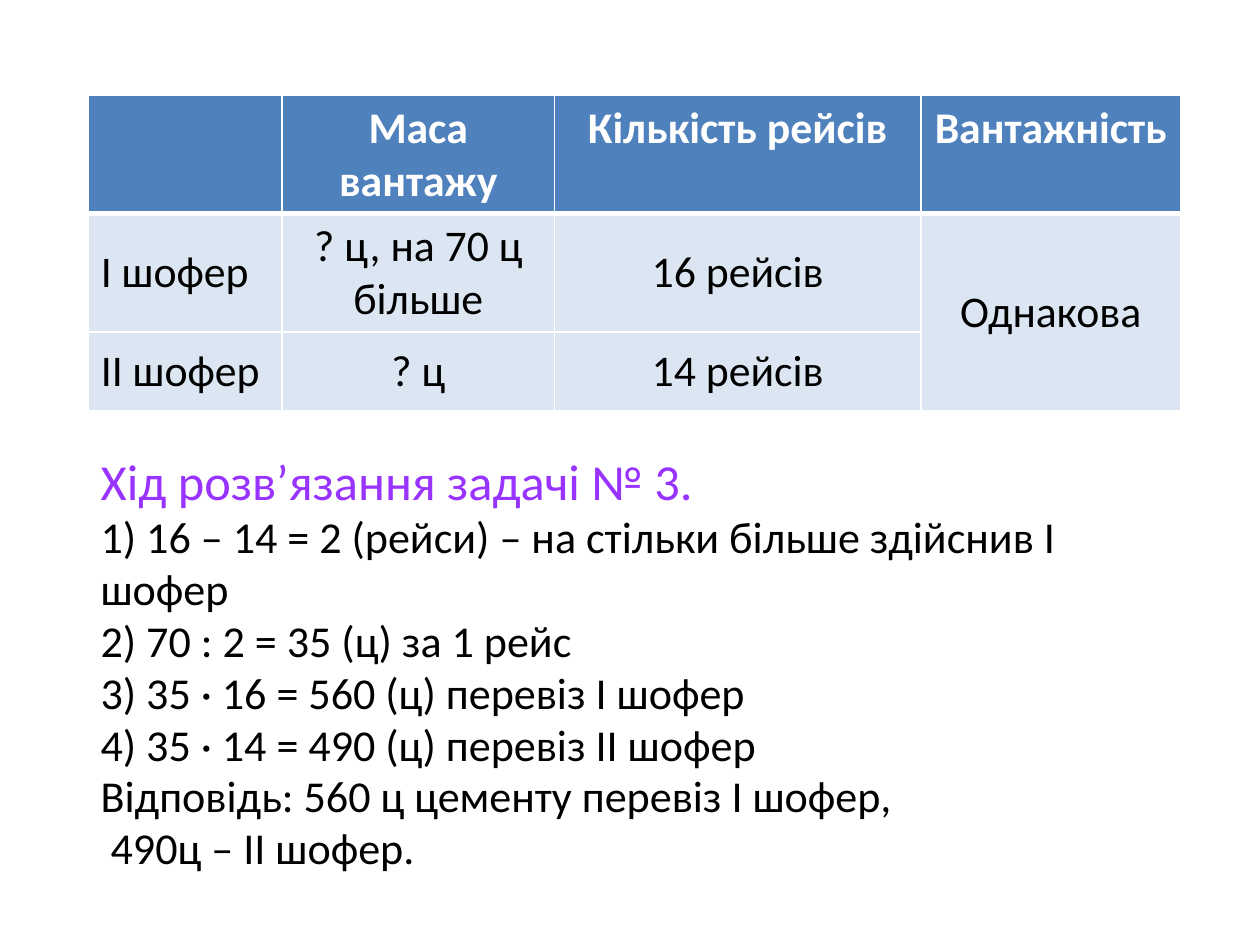
"""Build a slide with a cargo word problem table and its solution steps."""
from dataclasses import dataclass

from lxml import etree
from pptx import Presentation
from pptx.dml.color import RGBColor as Color
from pptx.enum.text import MSO_ANCHOR as Anchor, PP_ALIGN as Align
from pptx.oxml.ns import qn
from pptx.util import Inches, Pt


@dataclass(frozen=True)
class Theme:
    font: str = "Calibri"
    white: Color = Color(0xFF, 0xFF, 0xFF)
    black: Color = Color(0x00, 0x00, 0x00)
    header: Color = Color(0x4F, 0x81, 0xBD)
    body: Color = Color(0xDC, 0xE6, 0xF2)
    accent: Color = Color(0x99, 0x33, 0xFF)
    table_size: float = 25
    heading_size: float = 28.8
    step_size: float = 25.2


theme = Theme()


def add_text(paragraph, text, size, color, bold=False):
    run = paragraph.add_run()
    run.text = text
    run.font.name = theme.font
    run.font.size = Pt(size)
    run.font.bold = bold
    run.font.color.rgb = color


def set_borders(cell, bottom_width):
    properties = cell._tc.get_or_add_tcPr()
    widths = {"a:lnL": 1, "a:lnR": 1, "a:lnT": 1, "a:lnB": bottom_width}
    for position, (tag, width) in enumerate(widths.items()):
        line = etree.Element(qn(tag), w=str(Pt(width)))
        fill = etree.SubElement(line, qn("a:solidFill"))
        etree.SubElement(fill, qn("a:srgbClr"), val=str(theme.white))
        properties.insert(position, line)


presentation = Presentation()
presentation.slide_width = Inches(10)
presentation.slide_height = Inches(7.5)
slide = presentation.slides.add_slide(presentation.slide_layouts[6])

left, width = Inches(0.7), Inches(8.68)

solution = slide.shapes.add_textbox(left, Inches(3.51), width, Inches(3.46))
solution.fill.solid()
solution.fill.fore_color.rgb = theme.white
frame = solution.text_frame
frame.word_wrap = True
frame.vertical_anchor = Anchor.MIDDLE
frame.margin_top = Inches(0.11)

steps = [
    "Хід розв’язання задачі № 3.",
    "1) 16 – 14 = 2 (рейси) – на стільки більше здійснив І шофер",
    "2) 70 : 2 = 35 (ц) за 1 рейс",
    "3) 35 · 16 = 560 (ц) перевіз І шофер",
    "4) 35 · 14 = 490 (ц) перевіз ІІ шофер",
    "Відповідь: 560 ц цементу перевіз І шофер,",
    "490ц – ІІ шофер.",
]
for index, text in enumerate(steps):
    paragraph = frame.add_paragraph() if index else frame.paragraphs[0]
    paragraph.line_spacing = 0.98
    if index:
        add_text(paragraph, text, theme.step_size, theme.black)
    else:
        add_text(paragraph, text, theme.heading_size, theme.accent)
paragraph._p.get_or_add_pPr().set("marL", str(Inches(0.08)))

rows = [
    ["", "Маса вантажу", "Кількість рейсів", "Вантажність"],
    ["І шофер", "? ц, на 70 ц більше", "16 рейсів", "Однакова"],
    ["ІІ шофер", "? ц", "14 рейсів", ""],
]
column_widths = [1.54, 2.16, 2.91, 2.06]
row_heights = [0.93, 0.94, 0.63]
table = slide.shapes.add_table(
    len(rows), len(column_widths), left, Inches(0.76), width, Inches(2.5)
).table
for column, column_width in zip(table.columns, column_widths):
    column.width = Inches(column_width)
for row, row_height in zip(table.rows, row_heights):
    row.height = Inches(row_height)

for row_index, texts in enumerate(rows):
    is_header = row_index == 0
    for column_index, text in enumerate(texts):
        cell = table.cell(row_index, column_index)
        cell.fill.solid()
        cell.fill.fore_color.rgb = theme.header if is_header else theme.body
        cell.vertical_anchor = Anchor.TOP if is_header else Anchor.MIDDLE
        set_borders(cell, 3 if is_header else 1)
        paragraph = cell.text_frame.paragraphs[0]
        paragraph.alignment = Align.CENTER if column_index else Align.LEFT
        if text:
            color = theme.white if is_header else theme.black
            add_text(paragraph, text, theme.table_size, color, is_header)
table.cell(1, 3).merge(table.cell(2, 3))

presentation.save("out.pptx")
